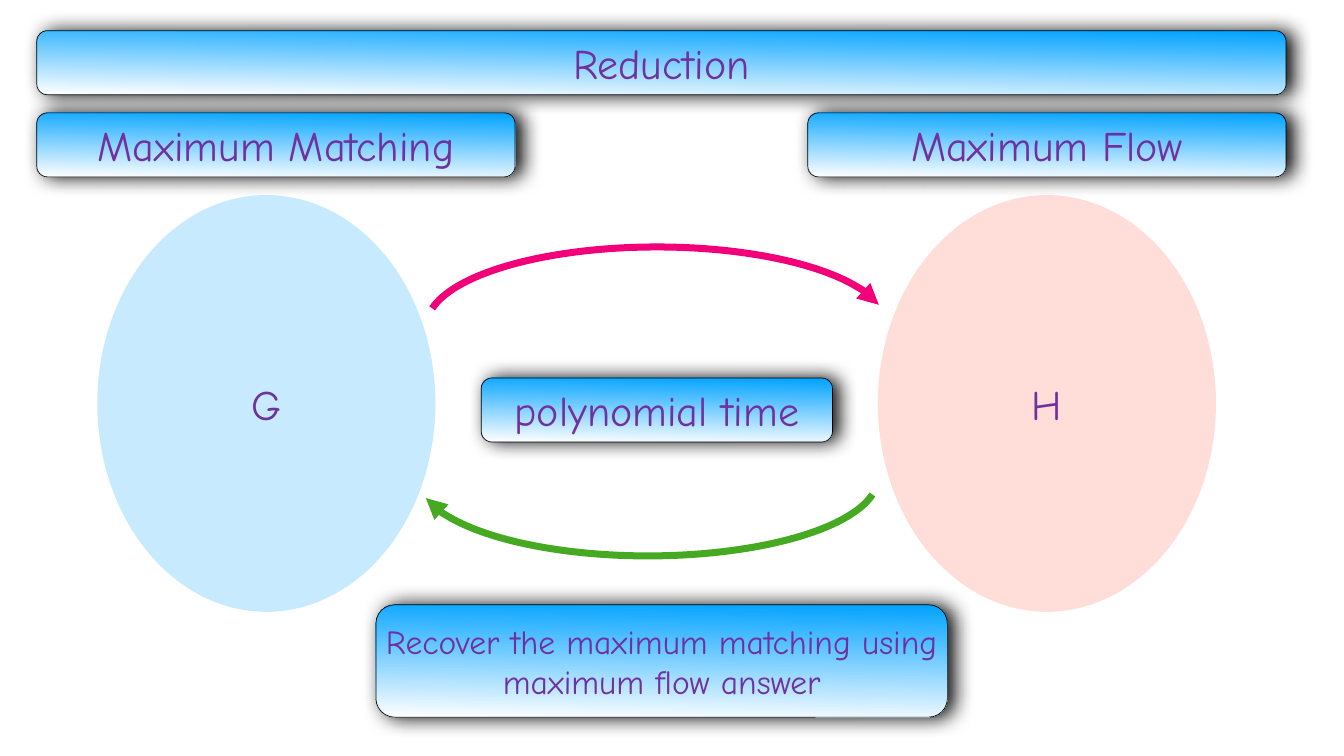
from lxml import etree
from pptx import Presentation
from pptx.dml.color import RGBColor
from pptx.enum.shapes import MSO_SHAPE
from pptx.enum.text import MSO_ANCHOR, PP_ALIGN
from pptx.oxml.ns import qn
from pptx.util import Inches, Pt

ROUNDED = MSO_SHAPE.ROUNDED_RECTANGLE
OVAL = MSO_SHAPE.OVAL
ARC = MSO_SHAPE.ARC
MIDDLE = MSO_ANCHOR.MIDDLE
CENTER = PP_ALIGN.CENTER

PURPLE = RGBColor(0x70, 0x30, 0xA0)
BLUE = RGBColor(0x00, 0xA2, 0xFF)
WHITE = RGBColor(0xFF, 0xFF, 0xFF)
BLACK = RGBColor(0x00, 0x00, 0x00)
SKY = RGBColor(0x66, 0xC7, 0xFF)
CORAL = RGBColor(0xFF, 0xA2, 0x95)
MAGENTA = RGBColor(0xF1, 0x00, 0x79)
GREEN = RGBColor(0x45, 0xAA, 0x21)

FONT = "Comic Neue"
SLIDE_WIDTH, SLIDE_HEIGHT = 26.67, 15
LABEL_HEIGHT = 1.27


def add_box(slide, kind, box):
    shape = slide.shapes.add_shape(kind, *(Inches(length) for length in box))
    shape.shadow.inherit = False
    return shape


def write_text(shape, text, size=60, color=PURPLE):
    frame = shape.text_frame
    frame.word_wrap = True
    frame.vertical_anchor = MIDDLE
    frame.margin_left = frame.margin_right = Inches(0.06)
    frame.margin_top = frame.margin_bottom = Inches(0.06)
    paragraph = frame.paragraphs[0]
    paragraph.alignment = CENTER
    run = paragraph.add_run()
    run.text = text
    run.font.name = FONT
    run.font.size = Pt(size)
    run.font.color.rgb = color


def add_alpha(color_element, percent):
    etree.SubElement(color_element, qn("a:alpha"), val=str(percent * 1000))


def add_shadow(shape, blur, distance, opacity):
    effects = shape._element.spPr.find(qn("a:effectLst"))
    shadow = etree.SubElement(
        effects, qn("a:outerShdw"), blurRad=str(Pt(blur)),
        dist=str(Pt(distance)), dir="0", rotWithShape="0")
    add_alpha(etree.SubElement(shadow, qn("a:srgbClr"), val=str(BLACK)), opacity)


def add_label(slide, box, text, size=60):
    shape = add_box(slide, ROUNDED, box)
    shape.fill.gradient()
    shape.fill.gradient_angle = 269
    for stop, position, color in zip(shape.fill.gradient_stops, (0, 1), (BLUE, WHITE)):
        stop.position = position
        stop.color.rgb = color
    shape.line.color.rgb = BLACK
    shape.line.width = Pt(1)
    add_shadow(shape, blur=28, distance=9, opacity=97)
    write_text(shape, text, size=size)


def add_graph(slide, box, name, color):
    shape = add_box(slide, OVAL, box)
    shape.fill.solid()
    shape.fill.fore_color.rgb = color
    add_alpha(shape._element.spPr.find(".//" + qn("a:srgbClr")), 36)
    shape.line.fill.background()
    write_text(shape, name)


def add_curved_arrow(slide, box, color, rotation=0):
    shape = add_box(slide, ARC, box)
    shape.adjustments[0] = 110.59
    shape.adjustments[1] = 212.83
    shape.rotation = rotation
    shape.fill.background()
    shape.line.color.rgb = color
    shape.line.width = Pt(10)
    etree.SubElement(shape.line._get_or_add_ln(), qn("a:tailEnd"), type="triangle")


def add_problem(slide, left, top, title, graph_offset, graph_name, color):
    add_label(slide, (left, top, 9.49, LABEL_HEIGHT), title)
    add_graph(slide, (left + graph_offset, top + 1.63, 6.71, 8.27), graph_name, color)


def add_transformations(slide, left, top):
    width, height = 9.13, 3.11
    add_curved_arrow(slide, (left + 0.18, top, width, height), MAGENTA)
    add_curved_arrow(slide, (left, top + 3.02, width, height), GREEN, rotation=180)
    add_label(slide, (left + 1.26, top + 2.6, 6.97, LABEL_HEIGHT), "polynomial time")


def main():
    presentation = Presentation()
    presentation.slide_width = Inches(SLIDE_WIDTH)
    presentation.slide_height = Inches(SLIDE_HEIGHT)
    slide = presentation.slides.add_slide(presentation.slide_layouts[6])

    add_problem(slide, 0.73, 2.24, "Maximum Matching", 1.2, "G", SKY)
    add_problem(slide, 16.03, 2.24, "Maximum Flow", 1.39, "H", CORAL)
    add_label(slide, (0.73, 0.61, 24.79, LABEL_HEIGHT), "Reduction")
    add_label(slide, (7.46, 12, 11.34, 2.23),
              "Recover the maximum matching using maximum flow answer", size=48)
    add_transformations(slide, 8.29, 4.9)

    presentation.save("out.pptx")


if __name__ == "__main__":
    main()
